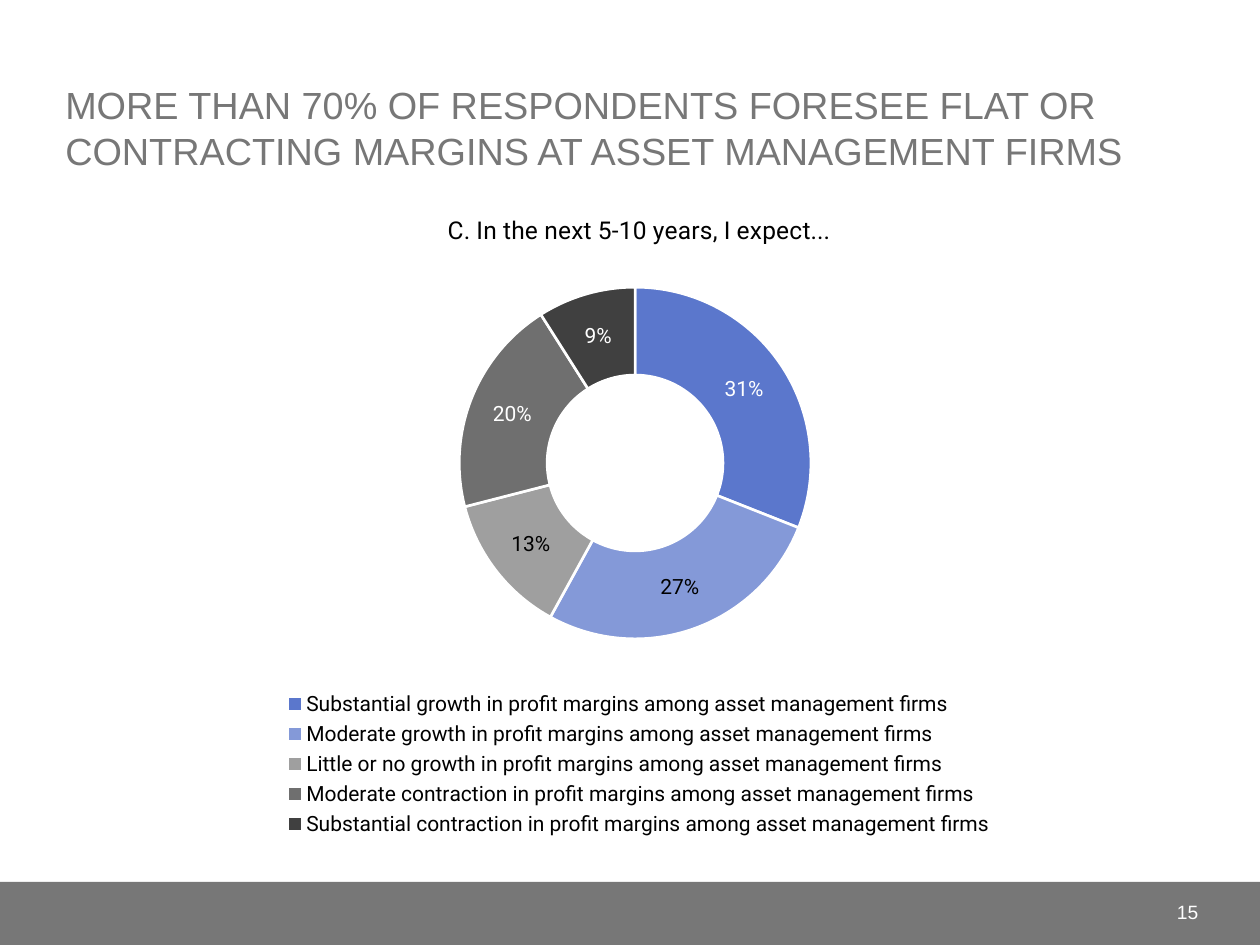
from lxml import etree
from pptx import Presentation
from pptx.chart.data import CategoryChartData
from pptx.dml.color import RGBColor
from pptx.enum.chart import XL_CHART_TYPE, XL_LEGEND_POSITION
from pptx.enum.shapes import MSO_SHAPE
from pptx.enum.text import MSO_ANCHOR, PP_ALIGN
from pptx.oxml import parse_xml
from pptx.oxml.ns import nsdecls, qn
from pptx.util import Inches, Pt

DOUGHNUT = XL_CHART_TYPE.DOUGHNUT
LEGEND_BOTTOM = XL_LEGEND_POSITION.BOTTOM
RECTANGLE = MSO_SHAPE.RECTANGLE
BOTTOM, MIDDLE = MSO_ANCHOR.BOTTOM, MSO_ANCHOR.MIDDLE
LEFT, RIGHT = PP_ALIGN.LEFT, PP_ALIGN.RIGHT

GRAY = RGBColor(0x77, 0x77, 0x77)
WHITE = RGBColor(0xFF, 0xFF, 0xFF)
BLACK = RGBColor(0, 0, 0)
BLUE = RGBColor(0x5B, 0x77, 0xCC)
CHARCOAL = RGBColor(0x40, 0x40, 0x40)

# Answer, share, slice colour, opacity in percent, label colour
ANSWERS = [
    ("Substantial growth", 0.31, BLUE, 100, WHITE),
    ("Moderate growth", 0.27, BLUE, 75, BLACK),
    ("Little or no growth", 0.13, CHARCOAL, 50, BLACK),
    ("Moderate contraction", 0.20, CHARCOAL, 75, WHITE),
    ("Substantial contraction", 0.09, CHARCOAL, 100, WHITE),
]
SUBJECT = "in profit margins among asset management firms"


class SlideBuilder:
    text_font = "Arial"
    chart_font = "Roboto"

    def __init__(self, slide):
        self.slide = slide

    def style_font(self, font, name, size, color):
        for attribute, value in {"name": name, "size": Pt(size), "bold": False}.items():
            setattr(font, attribute, value)
        font.color.rgb = color

    def bar(self, left, top, width, height, color):
        bar = self.slide.shapes.add_shape(
            RECTANGLE, Inches(left), Inches(top), Inches(width), Inches(height))
        bar.shadow.inherit = False
        bar.fill.solid()
        bar.fill.fore_color.rgb = color
        bar.line.fill.background()

    def text(self, words, left, top, width, height, size, color, anchor, align=LEFT):
        frame = self.slide.shapes.add_textbox(
            Inches(left), Inches(top), Inches(width), Inches(height)).text_frame
        frame.word_wrap = True
        frame.vertical_anchor = anchor
        paragraph = frame.paragraphs[0]
        paragraph.alignment = align
        run = paragraph.add_run()
        run.text = words
        self.style_font(run.font, self.text_font, size, color)

    def doughnut(self, title, answers, left, top, width, height, plot_box):
        data = CategoryChartData(number_format="0%")
        data.categories = [f"{answer[0]} {SUBJECT}" for answer in answers]
        data.add_series("Series 1", [answer[1] for answer in answers])
        chart = self.slide.shapes.add_chart(
            DOUGHNUT, Inches(left), Inches(top), Inches(width), Inches(height), data).chart
        self.style_font(chart.font, self.chart_font, 10, BLACK)

        # Chart title and legend
        heading = chart.chart_title.text_frame
        heading.text = title
        self.style_font(heading.paragraphs[0].runs[0].font, self.chart_font, 14, BLACK)
        chart.has_legend = True
        chart.legend.position = LEGEND_BOTTOM
        chart.legend.include_in_layout = False
        self.style_font(chart.legend.font, self.chart_font, 12, BLACK)

        # Value labels
        plot = chart.plots[0]
        plot.vary_by_categories = True
        plot.has_data_labels = True
        labels = plot.series[0].data_labels
        for attribute, value in {"show_value": True, "show_percentage": False,
                                 "number_format": "0%",
                                 "number_format_is_linked": False}.items():
            setattr(labels, attribute, value)
        self.style_font(labels.font, self.chart_font, 12, BLACK)

        # Slices
        for index, (_, _, color, opacity, label_color) in enumerate(answers):
            point = plot.series[0].points[index]
            fill = point.format.fill
            fill.solid()
            fill.fore_color.rgb = color
            point.format.line.color.rgb = WHITE
            point.format.line.width = Pt(1.5)
            if opacity < 100:
                slice_color = point.format._element.find(
                    f".//{qn('c:spPr')}/{qn('a:solidFill')}/{qn('a:srgbClr')}") \
                    if hasattr(point.format, "_element") else \
                    plot.series[0]._element.findall(qn("c:dPt"))[index].find(
                        f"{qn('c:spPr')}/{qn('a:solidFill')}/{qn('a:srgbClr')}")
                etree.SubElement(slice_color, qn("a:alpha")).set("val", str(opacity * 1000))
            if label_color != BLACK:
                self.style_font(point.data_label.font, self.chart_font, 12, label_color)

        # Hole and plot position
        chart._chartSpace.find(f".//{qn('c:holeSize')}").set("val", "50")
        plot_area = chart._chartSpace.find(f".//{qn('c:plotArea')}")
        for old_layout in plot_area.findall(qn("c:layout")):
            plot_area.remove(old_layout)
        places = "".join(f'<c:{key} val="{value}"/>' for key, value in plot_box.items())
        plot_area.insert(0, parse_xml(
            f'<c:layout {nsdecls("c")}><c:manualLayout><c:layoutTarget val="inner"/>'
            f'<c:xMode val="edge"/><c:yMode val="edge"/>{places}'
            '</c:manualLayout></c:layout>'))


def main():
    deck = Presentation()
    deck.slide_width, deck.slide_height = Inches(10), Inches(7.5)
    builder = SlideBuilder(deck.slides.add_slide(deck.slide_layouts[6]))

    # Footer bar, headline and page number
    builder.bar(0, 7, 10, 0.5, GRAY)
    builder.text("MORE THAN 70% OF RESPONDENTS FORESEE FLAT OR CONTRACTING MARGINS "
                 "AT ASSET MANAGEMENT FIRMS", 0.42, 0.17, 9.16, 1.25, 21.6, GRAY, BOTTOM)
    builder.text("15", 8.75, 7.04, 0.86, 0.4, 11, WHITE, MIDDLE, RIGHT)

    # Survey result
    builder.doughnut("C. In the next 5-10 years, I expect...", ANSWERS,
                     1.67, 1.5, 6.81, 5.18,
                     {"x": 0.29, "y": 0.15, "w": 0.41, "h": 0.54})

    deck.save("out.pptx")


if __name__ == "__main__":
    main()
